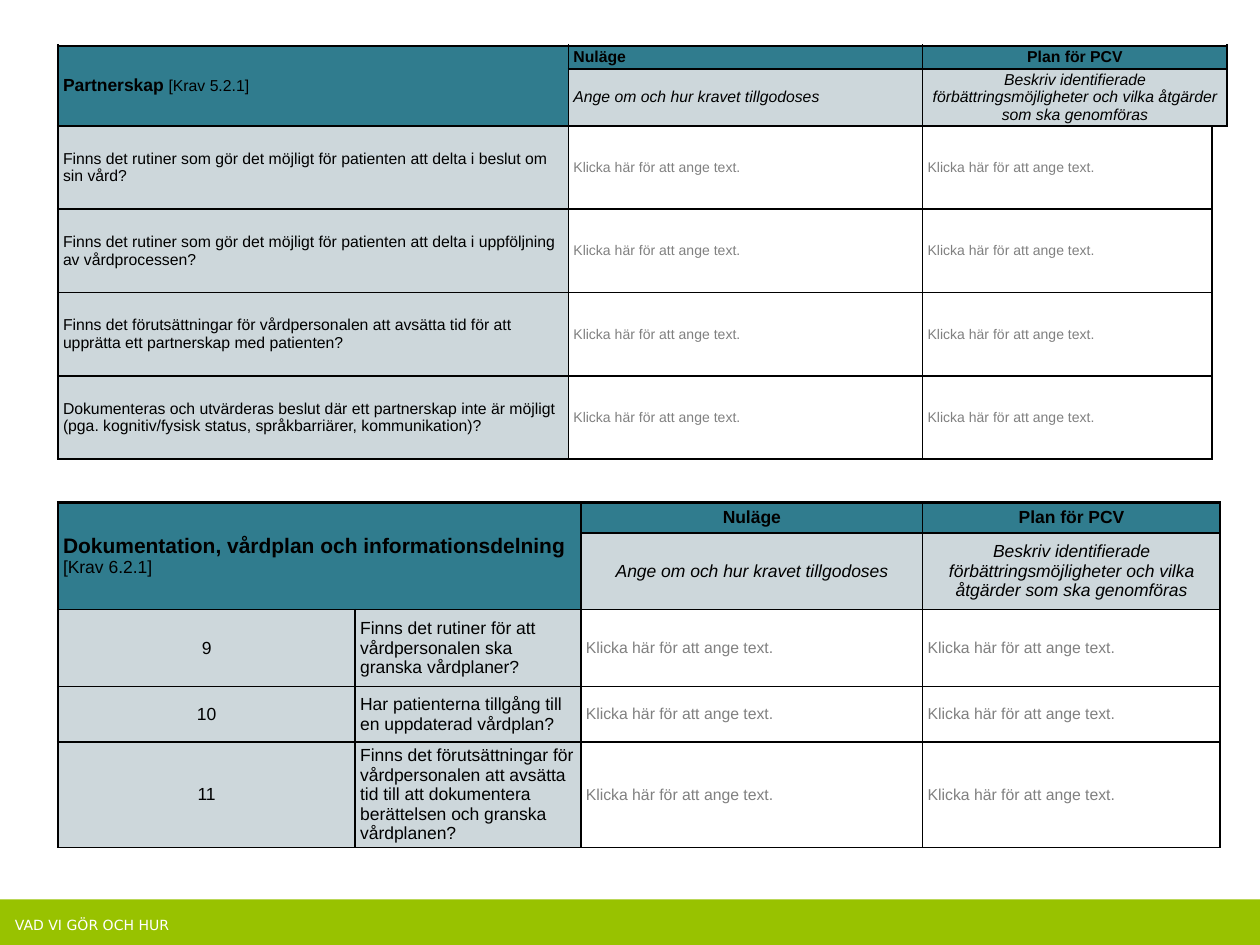
from lxml import etree
from pptx import Presentation
from pptx import util as u
from pptx.dml.color import RGBColor
from pptx.enum import shapes, text
from pptx.oxml import ns

TEAL = RGBColor(0x30, 0x7C, 0x8E)
GREY = RGBColor(0xCD, 0xD7, 0xDB)
LIME = RGBColor(0x98, 0xC2, 0x00)
BLACK = RGBColor(0x00, 0x00, 0x00)
HINT = RGBColor(0x80, 0x80, 0x80)
WHITE = RGBColor(0xFF, 0xFF, 0xFF)

NO_STYLE = "{2D5ABB26-0587-4C30-8999-92F81FD0307C}"
CENTER = text.PP_ALIGN.CENTER
LEFT = text.PP_ALIGN.LEFT
PROMPT = "Klicka här för att ange text."
NOW, PLAN = "Nuläge", "Plan för PCV"
NOW_HELP = "Ange om och hur kravet tillgodoses"
PLAN_HELP = ("Beskriv identifierade förbättringsmöjligheter och vilka åtgärder "
             "som ska genomföras")

PARTNERSHIP = [
    "Finns det rutiner som gör det möjligt för patienten att delta i beslut om sin vård?",
    "Finns det rutiner som gör det möjligt för patienten att delta i uppföljning av vårdprocessen?",
    "Finns det förutsättningar för vårdpersonalen att avsätta tid för att upprätta "
    "ett partnerskap med patienten?",
    "Dokumenteras och utvärderas beslut där ett partnerskap inte är möjligt "
    "(pga. kognitiv/fysisk status, språkbarriärer, kommunikation)?",
]
DOCUMENTATION = [
    "Finns det rutiner för att vårdpersonalen ska granska vårdplaner?",
    "Har patienterna tillgång till en uppdaterad vårdplan?",
    "Finns det förutsättningar för vårdpersonalen att avsätta tid till att "
    "dokumentera berättelsen och granska vårdplanen?",
]


def set_font(font, size, color=BLACK, bold=False, italic=False, name="Arial"):
    """Format a paragraph or run font."""
    font.name, font.size = name, u.Pt(size)
    font.bold, font.italic = bold, italic
    font.color.rgb = color


def add_borders(cell, **widths):
    """Draw black cell borders; widths in points are keyed L, R, T, B."""
    tc_pr = cell._tc.get_or_add_tcPr()
    for side in "LRTB":
        if side in widths:
            ln = etree.SubElement(tc_pr, ns.qn(f"a:ln{side}"), w=str(u.Pt(widths[side])))
            fill = etree.SubElement(ln, ns.qn("a:solidFill"))
            etree.SubElement(fill, ns.qn("a:srgbClr"), val=str(BLACK))


def fill_cell(cell, words, size, fill=None, align=LEFT, **font):
    """Write one formatted paragraph in a cell and fill its background."""
    p = cell.text_frame.paragraphs[0]
    p.alignment = align
    set_font(p.font, size, **font)
    if words:
        p.add_run().text = words
    if fill is not None:
        cell.fill.solid()
        cell.fill.fore_color.rgb = fill


def add_grid(s, top, cols, rows, merges, edge):
    """Add an unstyled bordered table whose heavy right edge follows column edge."""
    frame = s.shapes.add_table(len(rows), len(cols), u.Cm(1.17), u.Cm(top),
                               u.Cm(sum(cols)), u.Cm(sum(rows)))
    table = frame.table
    table.first_row = table.horz_banding = False
    table._tbl.tblPr.find(ns.qn("a:tableStyleId")).text = NO_STYLE
    for col, width in zip(table.columns, cols):
        col.width = u.Cm(width)
    for row, height in zip(table.rows, rows):
        row.height = u.Cm(height)
    for first, last in merges:
        table.cell(*first).merge(table.cell(*last))
    for r in range(len(rows)):
        for c in range(len(cols)):
            cell = table.cell(r, c)
            cell.vertical_anchor = text.MSO_ANCHOR.MIDDLE
            cell.margin_left = cell.margin_right = u.Cm(0.1)
            cell.margin_top = cell.margin_bottom = 0
            if cell.is_spanned:
                fill_cell(cell, "", 8)
            elif c >= edge:
                fill_cell(cell, "", 8)
                add_borders(cell, L=1.5)
            else:
                right = c + (cell.span_width if cell.is_merge_origin else 1)
                add_borders(cell, L=1.5 if c == 0 else 1, R=1.5 if right >= edge else 1,
                            T=1.5 if r == 0 else 1, B=1)
    return table


def fill_header(table, heading, heading_size, clause, size, now_col, now_align):
    """Fill the two header rows of a requirement table."""
    title = table.cell(0, 0)
    fill_cell(title, "", heading_size, TEAL)
    p = title.text_frame.paragraphs[0]
    for words, run_size, bold in ((heading, heading_size, True), (clause, size, False)):
        r = p.add_run()
        r.text = words
        set_font(r.font, run_size, bold=bold)
    columns = ((NOW, NOW_HELP, now_align), (PLAN, PLAN_HELP, CENTER))
    for c, (name, guidance, align) in enumerate(columns, now_col):
        fill_cell(table.cell(0, c), name, size, TEAL, align, bold=True)
        fill_cell(table.cell(1, c), guidance, size, GREY, align, italic=True)


def fill_questions(table, questions, col, size, prompt_size):
    """Fill one row per question, followed by two answer prompts."""
    for r, question in enumerate(questions, 2):
        fill_cell(table.cell(r, col), question, size, GREY)
        for c in (col + 1, col + 2):
            fill_cell(table.cell(r, c), PROMPT, prompt_size, color=HINT)


def add_footer(s, words):
    """Add the green footer band and its label."""
    band = s.shapes.add_shape(shapes.MSO_SHAPE.RECTANGLE, 0, u.Cm(18.13), u.Cm(25.4), u.Cm(0.92))
    band.shadow.inherit = False
    band.fill.solid()
    band.fill.fore_color.rgb = LIME
    band.line.fill.background()
    sp = s.shapes.add_textbox(u.Cm(0.05), u.Cm(18.31), u.Cm(3.91), u.Cm(0.64))
    p = sp.text_frame.paragraphs[0]
    p.line_spacing = 1.1
    set_font(p.font, 8, WHITE, name="DejaVu Sans")
    p.add_run().text = words


def main():
    """Build the slide with both requirement tables."""
    prs = Presentation()
    prs.slide_width, prs.slide_height = u.Cm(25.4), u.Cm(19.05)
    s = prs.slides.add_slide(prs.slide_layouts[6])
    add_footer(s, "VAD VI GÖR OCH HUR")

    table = add_grid(s, 0.92, [10.29, 7.14, 5.84, 0.17], [0.47, 1.13] + [1.68] * 4,
                     [((0, 0), (1, 0)), ((0, 2), (0, 3)), ((1, 2), (1, 3))], edge=3)
    fill_header(table, "Partnerskap ", 10, "[Krav 5.2.1]", 9, 1, LEFT)
    fill_questions(table, PARTNERSHIP, 0, 9, 8)

    table = add_grid(s, 10.13, [5.99, 4.55, 6.89, 6], [0.61, 1.55, 1.55, 1.12, 2.1],
                     [((0, 0), (1, 1))], edge=4)
    fill_header(table, "Dokumentation, vårdplan och informationsdelning ", 12,
                "[Krav 6.2.1]", 10, 2, CENTER)
    fill_questions(table, DOCUMENTATION, 1, 10, 9)
    for r, number in enumerate(("9", "10", "11"), 2):
        fill_cell(table.cell(r, 0), number, 10, GREY, CENTER)

    prs.save("out.pptx")


if __name__ == "__main__":
    main()
